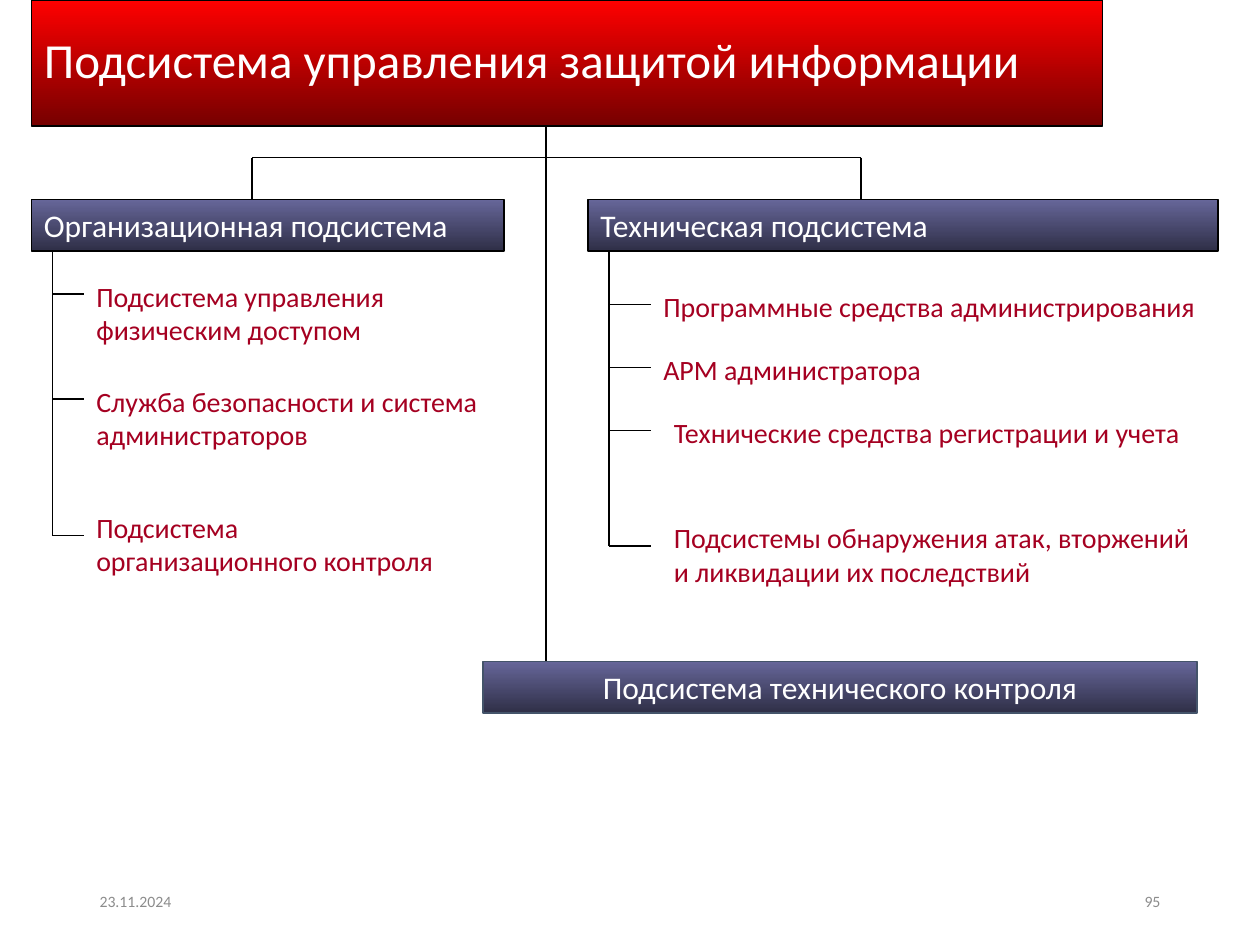
"""Build the slide with the scheme of the information security management subsystem."""

from dataclasses import dataclass

import lxml.etree
import pptx
import pptx.dml.color
import pptx.enum.shapes
import pptx.enum.text
import pptx.oxml.ns
import pptx.util

RGBColor = pptx.dml.color.RGBColor
Align = pptx.enum.text.PP_ALIGN
Anchor = pptx.enum.text.MSO_ANCHOR

WHITE = RGBColor(0xFF, 0xFF, 0xFF)
BLACK = RGBColor(0, 0, 0)
RED = RGBColor(0xFF, 0, 0)
DARK_RED = RGBColor(0x76, 0, 0)
VIOLET = RGBColor(0x66, 0x66, 0x99)
DARK_VIOLET = RGBColor(0x2F, 0x2F, 0x47)
SLATE = RGBColor(0x44, 0x54, 0x6A)
CRIMSON = RGBColor(0xA5, 0, 0x21)
GRAY = RGBColor(0x8C, 0x8C, 0x8C)

FONT = "Calibri"
CELL = pptx.util.Inches(10) / 120
BAR_ROWS = 4.9
ONE_LINE, TWO_LINES = 4.4, 7.7


@dataclass
class Label:
    text: str
    col: float
    row: float
    cols: float
    rows: float
    size: float = 16
    color: RGBColor = CRIMSON
    align: Align = Align.LEFT
    anchor: Anchor = Anchor.TOP
    spacing: float = 1.0


@dataclass
class Bar:
    label: Label
    top: RGBColor = VIOLET
    bottom: RGBColor = DARK_VIOLET
    outline: RGBColor = BLACK


@dataclass
class Branch:
    bar: Bar
    drop_col: float
    stem_col: float
    tick_end: float
    ticks: list[float]
    items: list[Label]


TITLE = Bar(
    Label("Подсистема управления защитой информации", 3, 0, 102, 12, 28, WHITE,
          anchor=Anchor.MIDDLE, spacing=0.9),
    RED, DARK_RED)
CONTROL = Bar(
    Label("Подсистема технического контроля", 46, 63, 68, BAR_ROWS, 18, WHITE, Align.CENTER),
    outline=SLATE)
BRANCHES = [
    Branch(
        Bar(Label("Организационная подсистема", 3, 19, 45, BAR_ROWS, 18, WHITE)),
        24, 5, 8, [28, 38, 51],
        [Label("Подсистема управления физическим доступом", 8, 26, 40, TWO_LINES),
         Label("Служба безопасности и система администраторов", 8, 36, 39, TWO_LINES),
         Label("Подсистема организационного контроля", 8, 48, 37, TWO_LINES)]),
    Branch(
        Bar(Label("Техническая подсистема", 56, 19, 60, BAR_ROWS, 18, WHITE)),
        82, 58, 62, [29, 35, 41, 52],
        [Label("Программные средства администрирования", 62, 27, 58, ONE_LINE),
         Label("АРМ администратора", 62, 33, 58, ONE_LINE),
         Label("Технические средства регистрации и учета", 63, 39, 51, TWO_LINES),
         Label("Подсистемы обнаружения атак, вторжений и ликвидации их последствий",
               63, 49, 53, TWO_LINES)]),
]
FOOTERS = [
    Label("23.11.2024", 8.3, 83.4, 27, 4.8, 9, GRAY, anchor=Anchor.MIDDLE),
    Label("95", 84.7, 83.4, 27, 4.8, 9, GRAY, Align.RIGHT, Anchor.MIDDLE),
]
TRUNK_COL, CROSS_ROW, STEM_ROW = 52, 15, 24


def grid(*cells: float) -> list[int]:
    """Turn grid columns or rows into lengths."""
    return [round(cell * CELL) for cell in cells]


def write(shape, label: Label) -> None:
    """Put the label's text into a shape and format it."""
    tf = shape.text_frame
    tf.word_wrap = True
    tf.vertical_anchor = label.anchor
    tf.text = label.text
    p = tf.paragraphs[0]
    p.alignment = label.align
    p.line_spacing = label.spacing
    font = p.runs[0].font
    font.name, font.size = FONT, pptx.util.Pt(label.size)
    font.color.rgb = label.color


def add_label(s, label: Label) -> None:
    """Add a plain text box."""
    write(s.shapes.add_textbox(*grid(label.col, label.row, label.cols, label.rows)), label)


def add_bar(s, bar: Bar) -> None:
    """Add a rectangle with a vertical gradient and text."""
    label = bar.label
    sp = s.shapes.add_shape(pptx.enum.shapes.MSO_SHAPE.RECTANGLE,
                            *grid(label.col, label.row, label.cols, label.rows))
    sp.shadow.inherit = False
    sp.fill.gradient()
    sp.fill.gradient_angle = 270
    for stop, color in zip(sp.fill.gradient_stops, (bar.top, bar.bottom)):
        stop.color.rgb = color
    sp.line.color.rgb = bar.outline
    sp.line.width = pptx.util.Pt(0.75)
    write(sp, label)


def add_line(s, col: float, row: float, end_col: float, end_row: float) -> None:
    """Add a thin straight line between two grid points."""
    line = s.shapes.add_connector(pptx.enum.shapes.MSO_CONNECTOR.STRAIGHT,
                                  *grid(col, row, end_col, end_row))
    line.line.color.rgb = BLACK
    line.line.width = pptx.util.Pt(0.75)
    lxml.etree.SubElement(line._element.spPr, pptx.oxml.ns.qn("a:effectLst"))


def add_branch(s, branch: Branch) -> None:
    """Add a branch with its heading, its stem and its items."""
    add_bar(s, branch.bar)
    add_line(s, branch.drop_col, CROSS_ROW, branch.drop_col, branch.bar.label.row)
    add_line(s, branch.stem_col, STEM_ROW, branch.stem_col, branch.ticks[-1])
    for row in branch.ticks:
        add_line(s, branch.stem_col, row, branch.tick_end, row)
    for item in branch.items:
        add_label(s, item)


def main() -> None:
    """Build and save the slide."""
    prs = pptx.Presentation()
    prs.slide_width, prs.slide_height = pptx.util.Inches(10), pptx.util.Inches(7.5)
    s = prs.slides.add_slide(prs.slide_layouts[6])
    add_bar(s, TITLE)
    for footer in FOOTERS:
        add_label(s, footer)
    for branch in BRANCHES:
        add_branch(s, branch)
    add_line(s, BRANCHES[0].drop_col, CROSS_ROW, BRANCHES[1].drop_col, CROSS_ROW)
    add_line(s, TRUNK_COL, TITLE.label.rows, TRUNK_COL, CROSS_ROW)
    add_line(s, TRUNK_COL, CROSS_ROW, TRUNK_COL, CONTROL.label.row)
    add_bar(s, CONTROL)
    prs.save("out.pptx")


if __name__ == "__main__":
    main()
